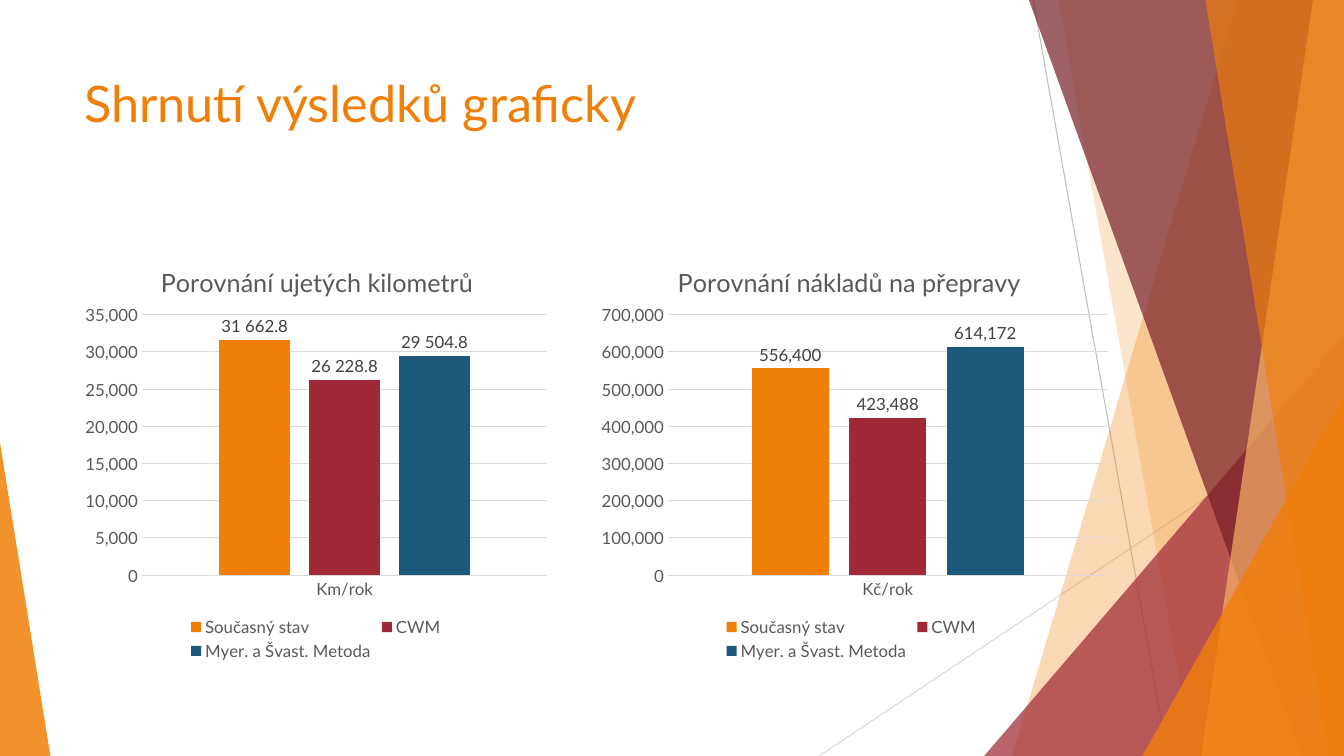
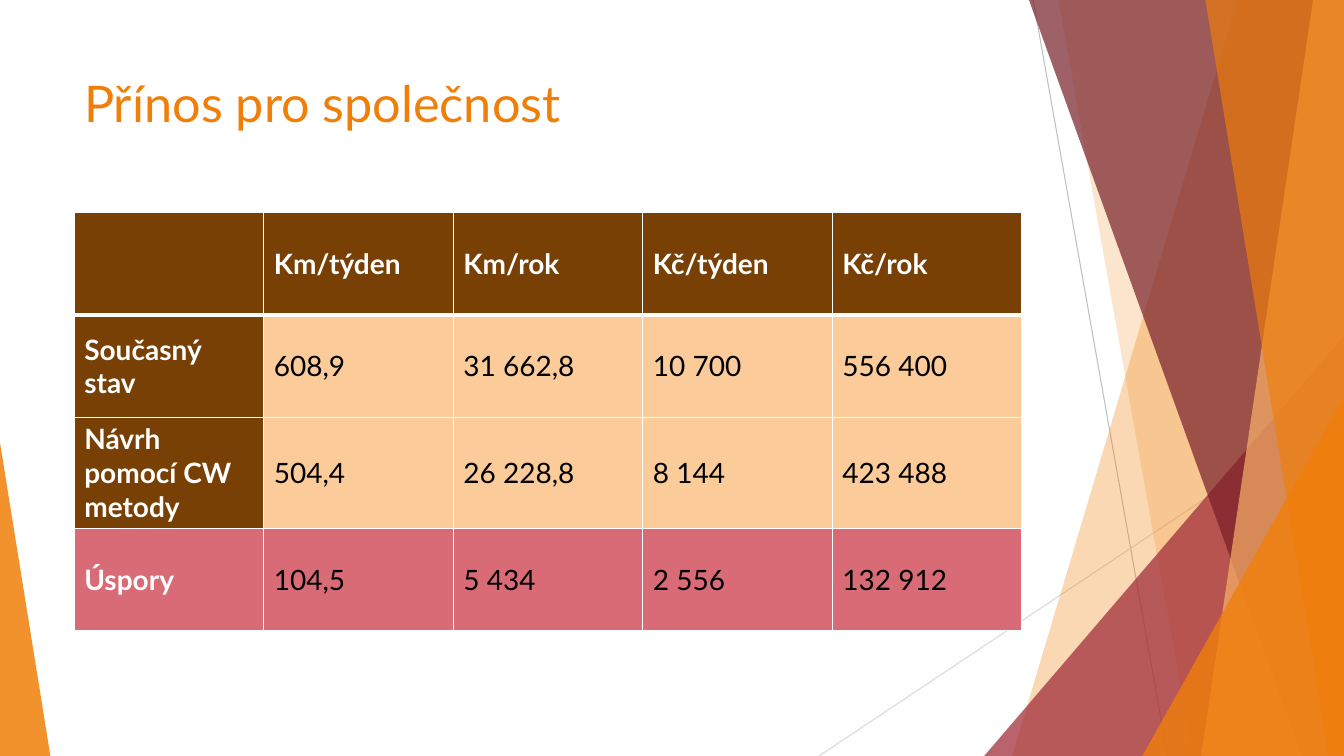
"""Build two slides comparing transport distances, costs and savings."""
import dataclasses

import lxml.etree
import pptx
import pptx.chart.data
import pptx.dml.color
import pptx.enum.chart
import pptx.enum.shapes
import pptx.enum.text
import pptx.oxml.ns
import pptx.util

Pt = pptx.util.Pt
qn = pptx.oxml.ns.qn


@dataclasses.dataclass(frozen=True)
class Theme:
    """Colours, type sizes and page size in points."""
    font: str = "Lato"
    wide: int = 960
    high: int = 540
    left: int = 53
    body: int = 677
    head: int = 36
    cell: int = 20
    cap: int = 18
    small: int = 12
    white: str = "FFFFFF"
    black: str = "000000"
    orange: str = "F07F09"
    peach: str = "F9B268"
    red: str = "9F2936"
    wine: str = "771F28"
    blue: str = "1B587C"
    brown: str = "784004"
    cream: str = "FBCC9A"
    rose: str = "D96B77"
    gray: str = "595959"
    dark: str = "404040"
    rule: str = "D9D9D9"
    edge: str = "BFBFBF"


T = Theme()


def rgb(code):
    """Return a colour object."""
    return pptx.dml.color.RGBColor.from_string(code)


def style(font, size, color, bold=False):
    """Set the look of a font."""
    font.name, font.size, font.bold = T.font, Pt(size), bold
    font.color.rgb = rgb(color)


def add(parent, tag, **attrs):
    """Append an XML child."""
    return lxml.etree.SubElement(parent, qn(tag), attrs)


def tint(shape, color, alpha):
    """Give a shape a see-through fill, with no line or shadow."""
    shape.shadow.inherit = False
    shape.line.fill.background()
    shape.fill.solid()
    shape.fill.fore_color.rgb = rgb(color)
    node = shape._element.spPr.find(qn("a:solidFill"))[0]
    add(node, "a:alpha", val=str(alpha * 1000))


def line(slide, start, end, color):
    """Draw a thin straight line."""
    kind = pptx.enum.shapes.MSO_CONNECTOR.STRAIGHT
    item = slide.shapes.add_connector(kind, *map(Pt, start + end))
    item.line.color.rgb = rgb(color)
    item.line.width = Pt(0.75)
    add(item._element.spPr, "a:effectLst")


def facet(slide, top, base, color, alpha):
    """Draw a band from a slanted edge to the right side of the page."""
    pen = slide.shapes.build_freeform(top, 0, scale=Pt(1))
    pen.add_line_segments([(T.wide, 0), (T.wide, T.high), (base, T.high)])
    tint(pen.convert_to_shape(), color, alpha)


def wedge(slide, left, top, width, peak, color, alpha):
    """Draw a triangle that stands on the foot of the page."""
    kind = pptx.enum.shapes.MSO_SHAPE.ISOSCELES_TRIANGLE
    box = map(Pt, (left, top, width, T.high - top))
    shape = slide.shapes.add_shape(kind, *box)
    shape.adjustments[0] = peak
    tint(shape, color, alpha)


def start(deck, text):
    """Add a slide with the shared art and a title."""
    slide = deck.slides.add_slide(deck.slide_layouts[6])
    line(slide, (738, 0), (834, T.high), T.edge)
    line(slide, (T.wide, 290), (585, T.high), T.rule)
    facet(slide, 884, 723, T.orange, 30)
    facet(slide, 756, 852, T.orange, 20)
    wedge(slide, 703, 240, 257, 1, T.red, 72)
    facet(slide, 735, 930, T.wine, 70)
    facet(slide, 938, 858, T.peach, 70)
    facet(slide, 861, 949, T.orange, 65)
    wedge(slide, 816, 283, 144, 1, T.orange, 80)
    wedge(slide, 0, 316, 36, 0, T.orange, 85)
    box = slide.shapes.add_textbox(*map(Pt, (T.left, 48, T.body, 104)))
    frame = box.text_frame
    frame.word_wrap = True
    frame.text = text
    style(frame.paragraphs[0].runs[0].font, T.head, T.orange)
    return slide


def place(node, index, **spots):
    """Set a fixed layout for a chart part."""
    for old in node.findall(qn("c:layout")):
        node.remove(old)
    layout = lxml.etree.Element(qn("c:layout"))
    node.insert(index, layout)
    spec_node = add(layout, "c:manualLayout")
    if "w" in spots:
        add(spec_node, "c:layoutTarget", val="inner")
    for side in ("x", "y"):
        add(spec_node, f"c:{side}Mode", val="edge")
    for key, value in spots.items():
        add(spec_node, f"c:{key}", val=str(value))


def name_chart(chart, text, left):
    """Give a chart its title."""
    chart.has_title = True
    title = chart.chart_title
    title.text_frame.text = text
    style(title.text_frame.paragraphs[0].runs[0].font, T.cap, T.gray)
    place(title._element, 1, x=left, y=0.05)


def set_axes(chart, top, step):
    """Format both axes and the grid."""
    none = pptx.enum.chart.XL_TICK_MARK.NONE
    base, scale = chart.category_axis, chart.value_axis
    for axis in (base, scale):
        axis.major_tick_mark = axis.minor_tick_mark = none
        style(axis.tick_labels.font, T.small, T.gray)
    scale.minimum_scale, scale.maximum_scale = 0, top
    scale.major_unit = step
    scale.tick_labels.number_format = "#,##0"
    scale.tick_labels.number_format_is_linked = False
    scale.format.line.fill.background()
    for rule in (base.format.line, scale.major_gridlines.format.line):
        rule.color.rgb = rgb(T.rule)
        rule.width = Pt(0.75)


def bars(slide, left, width, title, unit, values, top, step, form, inset):
    """Add a column chart with one group of three bars."""
    data = pptx.chart.data.CategoryChartData()
    data.categories = [unit]
    names = ("Současný stav", "CWM", "Myer. a Švast. Metoda")
    for name, value in zip(names, values):
        data.add_series(name, [value])
    kind = pptx.enum.chart.XL_CHART_TYPE.COLUMN_CLUSTERED
    box = map(Pt, (left, 170, width, 305))
    chart = slide.shapes.add_chart(kind, *box, data).chart
    style(chart.font, T.small, T.gray)
    name_chart(chart, title, inset[0])
    set_axes(chart, top, step)
    chart.has_legend = True
    chart.legend.position = pptx.enum.chart.XL_LEGEND_POSITION.BOTTOM
    chart.legend.include_in_layout = False
    style(chart.legend.font, T.small, T.gray)
    plot = chart.plots[0]
    plot.gap_width, plot.overlap = 219, -27
    plot.vary_by_categories = False
    for series, color in zip(plot.series, (T.orange, T.red, T.blue)):
        series.invert_if_negative = False
        series.format.fill.solid()
        series.format.fill.fore_color.rgb = rgb(color)
        tags = series.data_labels
        tags.show_value = True
        tags.number_format, tags.number_format_is_linked = form, False
        tags.position = pptx.enum.chart.XL_LABEL_POSITION.OUTSIDE_END
        style(tags.font, T.small, T.dark)
    area = chart._chartSpace.find(".//" + qn("c:plotArea"))
    place(area, 0, x=inset[1], y=0.18, w=0.84, h=0.61)


def frame_cell(cell, above, below):
    """Give a cell white borders."""
    props = cell._tc.get_or_add_tcPr()
    sides = (("L", 1), ("R", 1), ("T", above), ("B", below))
    for index, (side, width) in enumerate(sides):
        edge = lxml.etree.Element(qn(f"a:ln{side}"), {"w": str(Pt(width))})
        add(add(edge, "a:solidFill"), "a:srgbClr", val=T.white)
        props.insert(index, edge)


def grid(slide, rows):
    """Add the savings table."""
    count = len(rows)
    box = map(Pt, (T.left, 152, T.body, 73 * count))
    table = slide.shapes.add_table(count, len(rows[0]), *box).table
    table.horz_banding = False
    for r, row in enumerate(rows):
        for c, text in enumerate(row):
            cell = table.cell(r, c)
            strong = r == 0 or c == 0
            fill = T.brown if strong else T.cream
            cell.fill.solid()
            cell.fill.fore_color.rgb = rgb(T.rose if r == count - 1 else fill)
            cell.vertical_anchor = pptx.enum.text.MSO_ANCHOR.MIDDLE
            cell.text_frame.text = text
            ink = T.white if strong else T.black
            style(cell.text_frame.paragraphs[0].font, T.cell, ink, strong)
            for run in cell.text_frame.paragraphs[0].runs:
                style(run.font, T.cell, ink, strong)
            frame_cell(cell, 3 if r == 1 else 1, 3 if r == 0 else 1)


def main():
    """Build and save the deck."""
    deck = pptx.Presentation()
    deck.slide_width, deck.slide_height = Pt(T.wide), Pt(T.high)
    slide = start(deck, "Shrnutí výsledků graficky")
    bars(slide, T.left, 345, "Porovnání ujetých kilometrů", "Km/rok",
         (31662.8, 26228.8, 29504.8), 35000, 5000, "#\\ ##0.0", (0.17, 0.14))
    bars(slide, 421, 374, "Porovnání nákladů na přepravy", "Kč/rok",
         (556400, 423488, 614172), 700000, 100000, "#,##0", (0.16, 0.15))
    slide = start(deck, "Přínos pro společnost")
    grid(slide, (
        ("", "Km/týden", "Km/rok", "Kč/týden", "Kč/rok"),
        ("Současný stav", "608,9", "31 662,8", "10 700", "556 400"),
        ("Návrh pomocí CW metody", "504,4", "26 228,8", "8 144", "423 488"),
        ("Úspory", "104,5", "5 434", "2 556", "132 912"),
    ))
    deck.save("out.pptx")


if __name__ == "__main__":
    main()
